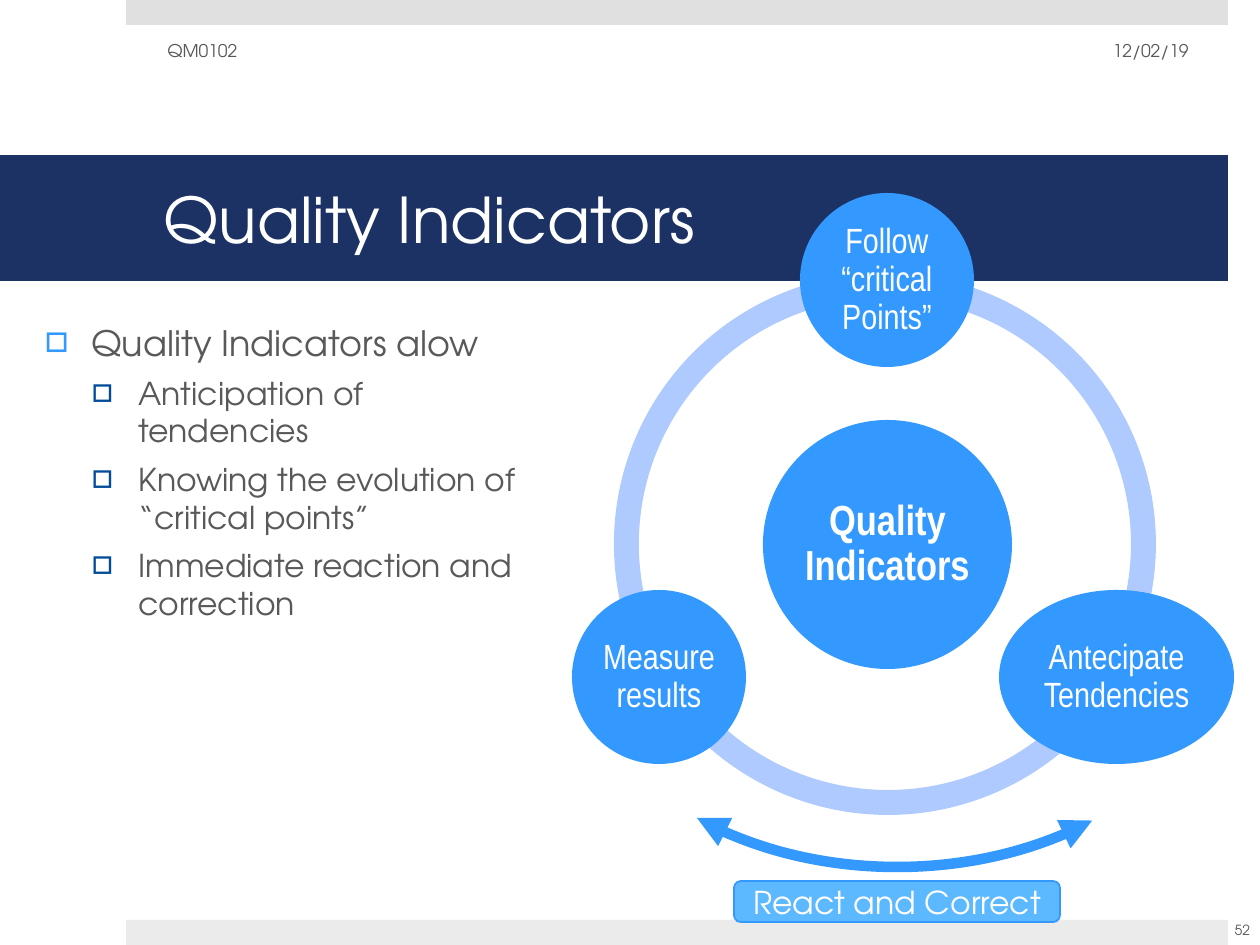
import pptx
import pptx.util
import pptx.dml.color
import pptx.enum.shapes
import pptx.enum.text
import pptx.oxml.ns
from dataclasses import dataclass
from lxml import etree

SHAPE = pptx.enum.shapes.MSO_SHAPE
ALIGN = pptx.enum.text.PP_ALIGN
MIDDLE = pptx.enum.text.MSO_ANCHOR.MIDDLE
SCALE = 914400 / 126


@dataclass(frozen=True)
class Theme:
    sans: str = "TeX Gyre Adventor"
    narrow: str = "Arial Narrow"
    white: str = "FFFFFF"
    grey: str = "595959"
    navy: str = "1C3264"
    blue: str = "3399FF"
    deep: str = "004C99"
    sky: str = "5CB8FF"
    pale: str = "AECAFF"
    top: str = "E0E0E0"
    foot: str = "EBEBEB"
    title: int = 36
    hub: int = 24
    lead: int = 20
    text: int = 18
    meta: int = 10
    page: int = 8


THEME = Theme()


def px(num):
    return pptx.util.Emu(round(num * SCALE))


def rgb(code):
    return pptx.dml.color.RGBColor.from_string(code)


def apply(item, form):
    for name, value in form.items():
        setattr(item, name, value)


def node(parent, tag, **attrs):
    return etree.SubElement(parent, pptx.oxml.ns.qn(tag), attrs)


def write(par, text, size, color, font=THEME.sans, bold=False, **form):
    """Put one styled run in a paragraph; form holds paragraph settings."""
    apply(par, form)
    run = par.add_run()
    run.text = text
    apply(run.font, {"size": pptx.util.Pt(size), "name": font, "bold": bold})
    run.font.color.rgb = rgb(color)


def frame(shape, inset=None, anchor=MIDDLE):
    """Set wrapping, anchor and insets (left, top, right, bottom)."""
    box = shape.text_frame
    apply(box, {"word_wrap": True, "vertical_anchor": anchor,
                "auto_size": pptx.enum.text.MSO_AUTO_SIZE.NONE})
    if inset:
        sides = ("margin_left", "margin_top", "margin_right", "margin_bottom")
        apply(box, dict(zip(sides, map(px, inset))))
    return box


def draw(slide, kind, at, fill=None, adj=()):
    shape = slide.shapes.add_shape(kind, *map(px, at))
    shape.shadow.inherit = False
    shape.line.fill.background()
    if fill:
        shape.fill.solid()
        shape.fill.fore_color.rgb = rgb(fill)
    else:
        shape.fill.background()
    for pos, value in enumerate(adj):
        shape.adjustments[pos] = value
    return shape


def stroke(shape, width):
    shape.line.color.rgb = rgb(THEME.blue)
    shape.line.width = pptx.util.Pt(width)


def turn(angle):
    """Turn degrees into an adjustment value."""
    return angle * 0.6


def head(slide, text):
    title = slide.shapes.title
    apply(title, dict(zip(("left", "top", "width", "height"),
                          map(px, (0, 155, 1228, 126)))))
    title.fill.solid()
    title.fill.fore_color.rgb = rgb(THEME.navy)
    box = frame(title, (164, 6, 38, 6))
    write(box.paragraphs[0], text, THEME.title, THEME.white,
          alignment=ALIGN.LEFT)


def note(slide, at, text, size, align):
    box = frame(slide.shapes.add_textbox(*map(px, at)))
    write(box.paragraphs[0], text, size, THEME.grey, alignment=align)


def bullet(par, left, color):
    props = par._p.get_or_add_pPr()
    props.set("marL", str(px(left)))
    props.set("indent", str(-px(47)))
    node(node(props, "a:buClr"), "a:srgbClr", val=color)
    node(props, "a:buFont", typeface=THEME.sans)
    node(props, "a:buChar", char="□")


def points(slide, lead, items):
    shape = slide.shapes.add_textbox(*map(px, (32, 315, 522, 505)))
    box = frame(shape, anchor=pptx.enum.text.MSO_ANCHOR.TOP)
    par = box.paragraphs[0]
    write(par, lead, THEME.lead, THEME.grey, space_before=pptx.util.Pt(20))
    bullet(par, 47, THEME.blue)
    for item in items:
        par = box.add_paragraph()
        write(par, item, THEME.text, THEME.grey, level=1,
              space_before=pptx.util.Pt(6))
        bullet(par, 94, THEME.deep)


def ring(slide):
    for left, start, end in ((617, 90, 162), (617, 18, 90), (614, 162, 18)):
        draw(slide, SHAPE.BLOCK_ARC, (left, 273, 542, 542), THEME.pale,
             (turn(start), turn(end), 0.046))


def disc(slide, at, text, size=THEME.lead, bold=False):
    box = frame(draw(slide, SHAPE.OVAL, at, THEME.blue), (4, 4, 4, 4))
    write(box.paragraphs[0], text, size, THEME.white, THEME.narrow, bold,
          alignment=ALIGN.CENTER, line_spacing=0.9)


def sweep(slide, at, start, end):
    """Draw an arc with an arrowhead at both ends."""
    arc = draw(slide, SHAPE.ARC, at, adj=(turn(start), turn(end)))
    stroke(arc, 6)
    line = arc.line._get_or_add_ln()
    for tag in ("a:headEnd", "a:tailEnd"):
        node(line, tag, type="triangle")


def label(slide, at, text):
    shape = draw(slide, SHAPE.ROUNDED_RECTANGLE, at, THEME.sky)
    stroke(shape, 1)
    write(frame(shape).paragraphs[0], text, THEME.text, THEME.white,
          alignment=ALIGN.CENTER)


def main():
    deck = pptx.Presentation()
    apply(deck, {"slide_width": px(1260), "slide_height": px(945)})
    slide = deck.slides.add_slide(deck.slide_layouts[5])

    for top, fill in ((0, THEME.top), (920, THEME.foot)):
        draw(slide, SHAPE.RECTANGLE, (126, top, 1102, 25), fill)
    head(slide, "Quality Indicators")
    points(slide, "Quality Indicators alow", (
        "Anticipation of tendencies",
        "Knowing the evolution of “critical points”",
        "Immediate reaction and correction"))
    note(slide, (907, 26, 294, 50), "12/02/19", THEME.meta, ALIGN.RIGHT)
    note(slide, (155, 26, 399, 50), "QM0102", THEME.meta, ALIGN.LEFT)
    note(slide, (1211, 905, 63, 50), "52", THEME.page, ALIGN.CENTER)

    ring(slide)
    disc(slide, (763, 420, 249, 249), "Quality Indicators", THEME.hub, True)
    disc(slide, (800, 193, 174, 174), "Follow “critical Points”")
    disc(slide, (999, 590, 235, 174), "Antecipate Tendencies")
    disc(slide, (572, 590, 174, 174), "Measure results")
    sweep(slide, (577, 420, 640, 447), 42.2, 138.9)
    label(slide, (734, 881, 326, 41), "React and Correct")
    deck.save("out.pptx")


if __name__ == "__main__":
    main()
